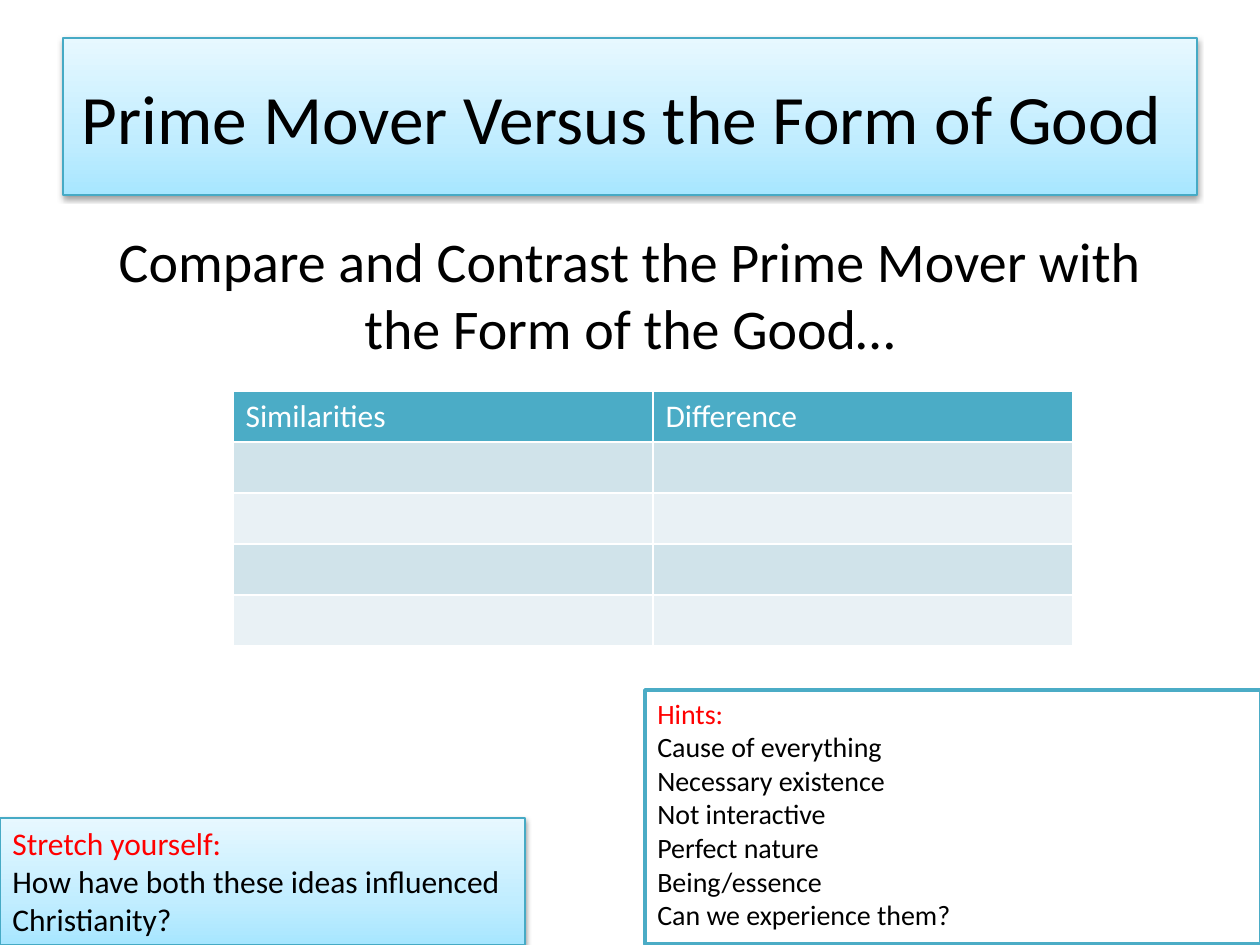
from dataclasses import dataclass

from pptx import Presentation
from pptx import util as u
from pptx.dml.color import RGBColor
from pptx.enum import shapes, text
from pptx.oxml import parse_xml
from pptx.oxml.ns import nsdecls, qn

PX_PER_INCH = 126


def px(count):
    return u.Emu(round(count * 914400 / PX_PER_INCH))


@dataclass(frozen=True)
class Theme:
    font: str = "Calibri"
    ink: str = "000000"
    paper: str = "FFFFFF"
    accent: str = "4BACC6"
    panel_edge: str = "46AAC5"
    label: str = "FF0000"
    bands: tuple = ("D0E3EA", "E9F1F5")
    gradient: tuple = ((0, "A7E6FF"), (35, "C1EDFF"), (100, "E7F8FF"))
    title_size: float = 39.6
    body_size: int = 32
    note_size: int = 18
    hint_size: int = 16


class SlideBuilder:
    def __init__(self, deck, theme):
        self.theme = theme
        self.page = deck.slides.add_slide(deck.slide_layouts[5])

    def place(self, box, left, top, width, height):
        box.left, box.top, box.width, box.height = map(px, (left, top, width, height))

    def add_span(self, para, wording, size, color):
        span = para.add_run()
        span.text = wording
        span.font.name = self.theme.font
        span.font.size = u.Pt(size)
        span.font.color.rgb = RGBColor.from_string(color)

    def outline(self, box, color, width):
        box.line.color.rgb = RGBColor.from_string(color)
        box.line.width = u.Pt(width)

    def glow_panel(self, box):
        """Give a box the vertical gradient, thin edge and soft drop shadow."""
        box.fill.gradient()
        stops = "".join(
            f'<a:gs pos="{position * 1000}"><a:srgbClr val="{color}"/></a:gs>'
            for position, color in self.theme.gradient
        )
        props = box._element.spPr
        props.replace(props.find(qn("a:gradFill")), parse_xml(
            f'<a:gradFill {nsdecls("a")} rotWithShape="1"><a:gsLst>{stops}</a:gsLst>'
            '<a:lin ang="16200000" scaled="0"/></a:gradFill>'))
        self.outline(box, self.theme.panel_edge, 0.75)
        box.shadow.inherit = False
        props.find(qn("a:effectLst")).append(parse_xml(
            f'<a:outerShdw {nsdecls("a")} blurRad="40000" dist="20000" dir="5400000" '
            'rotWithShape="0"><a:srgbClr val="000000"><a:alpha val="38000"/>'
            '</a:srgbClr></a:outerShdw>'))

    def title(self, wording, *area):
        box = self.page.shapes.title
        self.place(box, *area)
        self.glow_panel(box)
        frame = box.text_frame
        frame.auto_size = text.MSO_AUTO_SIZE.NONE
        frame.vertical_anchor = text.MSO_ANCHOR.MIDDLE
        para = frame.paragraphs[0]
        para.alignment = text.PP_ALIGN.CENTER
        self.add_span(para, wording, self.theme.title_size, self.theme.ink)

    def body(self, wording, *area):
        box = self.page.shapes.add_textbox(*map(px, area))
        box.text_frame.word_wrap = True
        para = box.text_frame.paragraphs[0]
        para.alignment = text.PP_ALIGN.CENTER
        para.space_before = u.Pt(6.4)
        self.add_span(para, wording, self.theme.body_size, self.theme.ink)

    def note(self, label, lines, size, *area):
        """Add a box with a coloured label above its lines."""
        box = self.page.shapes.add_shape(shapes.MSO_SHAPE.RECTANGLE, *map(px, area))
        box.shadow.inherit = False
        frame = box.text_frame
        frame.word_wrap = True
        frame.vertical_anchor = text.MSO_ANCHOR.TOP
        for index, wording in enumerate([label, *lines]):
            para = frame.add_paragraph() if index else frame.paragraphs[0]
            para.alignment = text.PP_ALIGN.LEFT
            self.add_span(para, wording, size, self.theme.ink if index else self.theme.label)
        return box

    def gradient_note(self, *args):
        self.glow_panel(self.note(*args))

    def plain_note(self, *args):
        box = self.note(*args)
        box.fill.solid()
        box.fill.fore_color.rgb = RGBColor.from_string(self.theme.paper)
        self.outline(box, self.theme.accent, 2)

    def cell_borders(self, cell):
        props = cell._tc.get_or_add_tcPr()
        for index, side in enumerate("LRTB"):
            props.insert(index, parse_xml(
                f'<a:ln{side} {nsdecls("a")} w="12700"><a:solidFill>'
                f'<a:srgbClr val="{self.theme.paper}"/></a:solidFill></a:ln{side}>'))

    def table(self, headings, blank_rows, *area):
        """Add a headed table with banded rows left free to fill in."""
        table = self.page.shapes.add_table(
            blank_rows + 1, len(headings), *map(px, area)).table
        for row in range(blank_rows + 1):
            color = self.theme.bands[(row - 1) % 2] if row else self.theme.accent
            for column, heading in enumerate(headings):
                cell = table.cell(row, column)
                cell.fill.solid()
                cell.fill.fore_color.rgb = RGBColor.from_string(color)
                self.cell_borders(cell)
                if row == 0:
                    para = cell.text_frame.paragraphs[0]
                    self.add_span(para, heading, self.theme.note_size, self.theme.paper)
                    para.runs[0].font.bold = False


def main():
    deck = Presentation()
    deck.slide_width, deck.slide_height = px(1260), px(945)
    theme = Theme()
    slide = SlideBuilder(deck, theme)
    slide.title("Prime Mover Versus the Form of Good ", 63, 38, 1134, 157)
    slide.body("Compare and Contrast the Prime Mover with the Form of the Good…",
               63, 220, 1134, 624)
    slide.table(["Similarities", "Difference"], 4, 233, 391, 840, 255)
    slide.gradient_note("Stretch yourself:",
                        ["How have both these ideas influenced Christianity?"],
                        theme.note_size, 0, 818, 525, 127)
    slide.plain_note("Hints:",
                     ["Cause of everything", "Necessary existence", "Not interactive",
                      "Perfect nature", "Being/essence", "Can we experience them?"],
                     theme.hint_size, 645, 690, 616, 254)
    deck.save("out.pptx")


if __name__ == "__main__":
    main()
